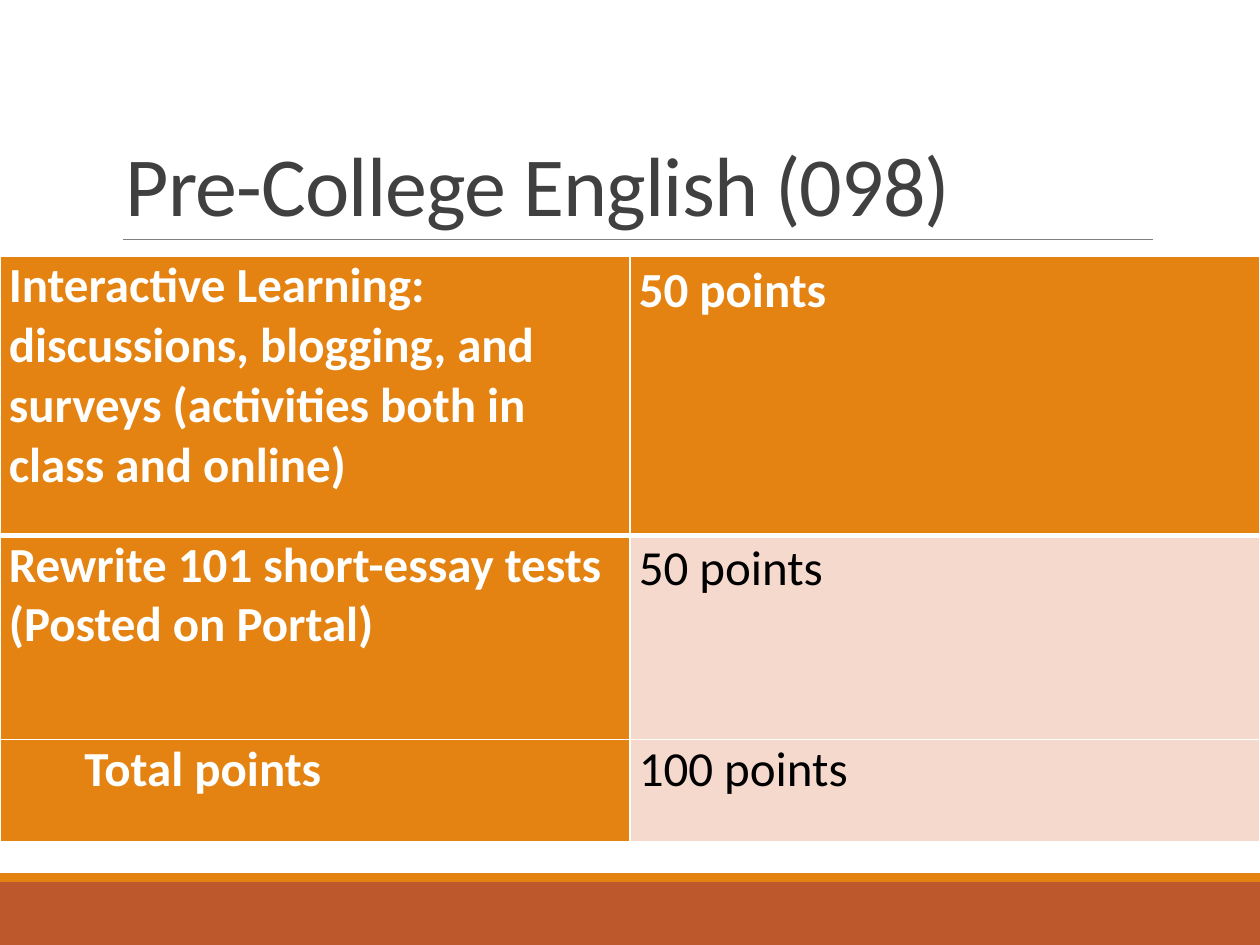
from lxml import etree
from pptx import Presentation
from pptx.dml.color import RGBColor
from pptx.enum import shapes, text
from pptx.oxml import ns
from pptx.util import Inches, Pt

WHITE = RGBColor(0xFF, 0xFF, 0xFF)
BLACK = RGBColor(0, 0, 0)
DARK = RGBColor(0x40, 0x40, 0x40)
GRAY = RGBColor(0x80, 0x80, 0x80)
ORANGE = RGBColor(0xE4, 0x83, 0x12)
RUST = RGBColor(0xBD, 0x58, 0x2C)
PINK = RGBColor(0xF5, 0xD9, 0xCC)
FONT = "Calibri"

TITLE = "Pre-College English (098)"
BARS = [(7, 0.5, RUST), (6.93, 0.07, ORANGE)]
ROWS = [
    ("Interactive Learning: discussions, blogging, and surveys "
     "(activities both in class and online)", "50 points"),
    ("Rewrite 101 short-essay tests (Posted on Portal)", "50 points"),
    ("Total points", "100 points"),
]
HEIGHTS = [2.22, 1.62, 0.81]
DROPS = [0.04, 0.03, 0]
INDENT = 0.6


def add_run(para, words, size, color, bold=False):
    run = para.add_run()
    run.text = words
    font = run.font
    font.name, font.size, font.bold = FONT, Pt(size), bold
    font.color.rgb = color
    return run


def add_edges(cell, widths):
    props = cell._tc.get_or_add_tcPr()
    for spot, (side, width) in enumerate(widths.items()):
        line = etree.Element(ns.qn("a:ln" + side), w=str(Pt(width)))
        fill = etree.SubElement(line, ns.qn("a:solidFill"))
        etree.SubElement(fill, ns.qn("a:srgbClr"), val=str(WHITE))
        props.insert(spot, line)


def add_frame(slide):
    for top, height, color in BARS:
        bar = slide.shapes.add_shape(shapes.MSO_SHAPE.RECTANGLE, 0,
                                     Inches(top), Inches(10), Inches(height))
        bar.shadow.inherit = False
        bar.fill.solid()
        bar.fill.fore_color.rgb = color
        bar.line.fill.background()
    rule = slide.shapes.add_connector(
        shapes.MSO_CONNECTOR.STRAIGHT,
        Inches(0.98), Inches(1.9), Inches(9.15), Inches(1.9))
    rule.line.color.rgb = GRAY
    rule.line.width = Pt(0.5)
    etree.SubElement(rule._element.spPr, ns.qn("a:effectLst"))


def add_title(slide):
    box = slide.shapes.add_textbox(Inches(0.9), Inches(0.31),
                                   Inches(8.25), Inches(1.59))
    frame = box.text_frame
    frame.word_wrap = True
    frame.vertical_anchor = text.MSO_ANCHOR.BOTTOM
    para = frame.paragraphs[0]
    para.line_spacing = 0.85
    run = add_run(para, TITLE, 48, DARK)
    run._r.get_or_add_rPr().set("spc", "-50")


def add_points(slide):
    table = slide.shapes.add_table(len(ROWS), 2, 0, Inches(2.03), Inches(10),
                                   Inches(sum(HEIGHTS))).table
    last = len(ROWS) - 1
    for r, words in enumerate(ROWS):
        table.rows[r].height = Inches(HEIGHTS[r])
        for c, word in enumerate(words):
            cell = table.cell(r, c)
            strong = r == 0 or c == 0
            cell.margin_left = cell.margin_right = Inches(0.07)
            cell.margin_top = Inches(DROPS[r] if c else 0)
            cell.margin_bottom = 0
            cell.fill.solid()
            cell.fill.fore_color.rgb = ORANGE if strong else PINK
            para = cell.text_frame.paragraphs[0]
            add_run(para, word, 28, WHITE if strong else BLACK, strong)
            if r == last and c == 0:
                para._p.get_or_add_pPr().set("marL", str(Inches(INDENT)))
            add_edges(cell, {"L": 1, "R": 1, "T": 3 if r == 1 else 1,
                             "B": 3 if r == 0 else 1})


def main():
    deck = Presentation()
    deck.slide_width, deck.slide_height = Inches(10), Inches(7.5)
    slide = deck.slides.add_slide(deck.slide_layouts[6])
    add_frame(slide)
    add_title(slide)
    add_points(slide)
    deck.save("out.pptx")


if __name__ == "__main__":
    main()
